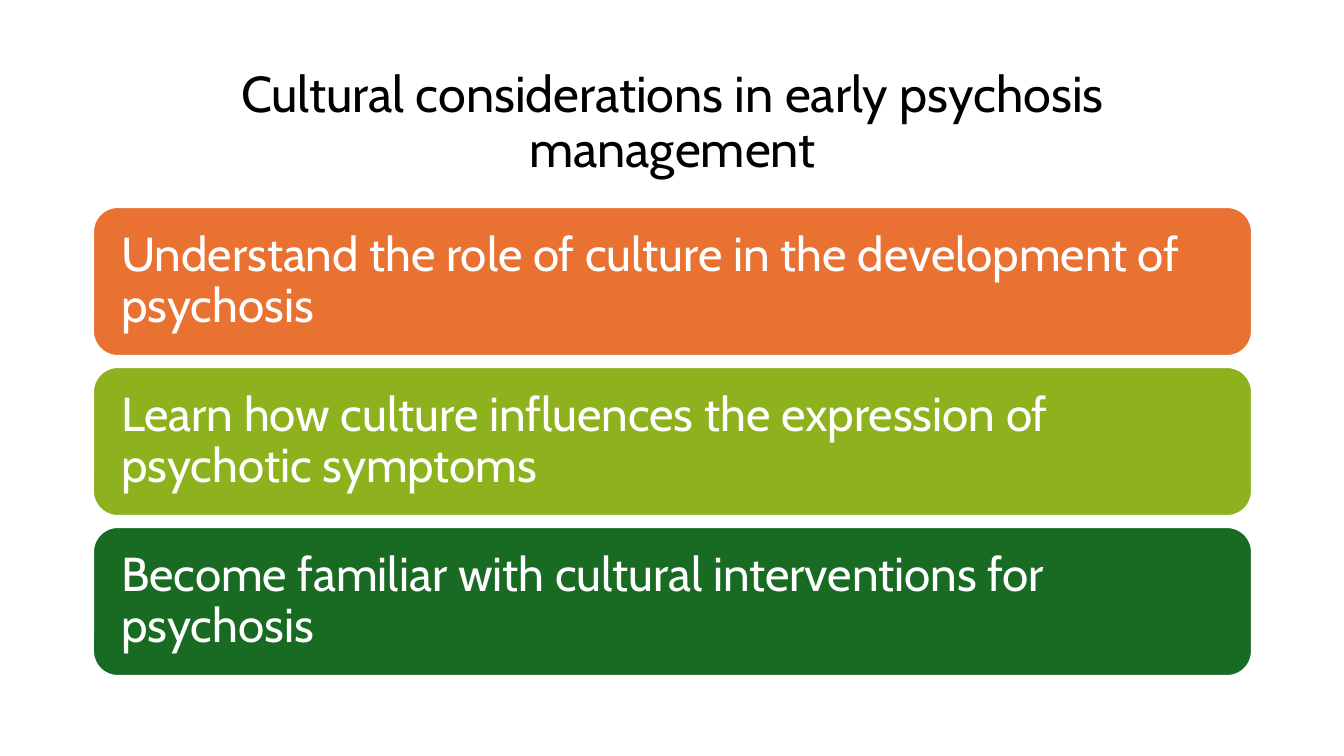
"""Build a title slide with three stacked goal bars."""
from pptx import Presentation
from pptx.dml.color import RGBColor
from pptx.enum.shapes import MSO_SHAPE
from pptx.enum.text import MSO_ANCHOR, MSO_AUTO_SIZE, PP_ALIGN
from pptx.util import Emu, Pt

ROUNDED = MSO_SHAPE.ROUNDED_RECTANGLE
MIDDLE = MSO_ANCHOR.MIDDLE
NO_FIT = MSO_AUTO_SIZE.NONE
LEFT, CENTER = PP_ALIGN.LEFT, PP_ALIGN.CENTER

THEME = {
    "font": "Cabin",
    "title_size": 36,
    "goal_size": 34,
    "black": "000000",
    "white": "FFFFFF",
    "bars": ["E97132", "8EB21E", "196B24"],
}
GOALS = [
    "Understand the role of culture in the development of psychosis",
    "Learn how culture influences the expression of psychotic symptoms",
    "Become familiar with cultural interventions for psychosis",
]
X, W = 93, 1159
TITLE_Y, TITLE_H = 61, 125
BAR_Y, BAR_H, BAR_STEP = 207, 149, 160
BAR_INSET = 21


def px(n):
    """Turn pixels into EMU."""
    return Emu(round(n * 914400 / 100.8))


def write(sp, text, align, size, color):
    """Put one formatted paragraph into a shape."""
    tf = sp.text_frame
    frame = {"word_wrap": True, "auto_size": NO_FIT, "vertical_anchor": MIDDLE}
    for name, value in frame.items():
        setattr(tf, name, value)
    p = tf.paragraphs[0]
    p.alignment = align
    p.line_spacing = 0.9
    r = p.add_run()
    r.text = text
    for name, value in {"name": THEME["font"], "size": Pt(size)}.items():
        setattr(r.font, name, value)
    r.font.color.rgb = RGBColor.from_string(color)


prs = Presentation()
prs.slide_width, prs.slide_height = px(1344), px(756)
s = prs.slides.add_slide(prs.slide_layouts[5])

title = s.shapes.title
box = {"left": X, "top": TITLE_Y, "width": W, "height": TITLE_H}
for name, value in box.items():
    setattr(title, name, px(value))
write(title, "Cultural considerations in early psychosis management",
      CENTER, THEME["title_size"], THEME["black"])

for i, (goal, color) in enumerate(zip(GOALS, THEME["bars"])):
    y = BAR_Y + i * BAR_STEP
    sp = s.shapes.add_shape(ROUNDED, px(X), px(y), px(W), px(BAR_H))
    sp.shadow.inherit = False
    sp.fill.solid()
    sp.fill.fore_color.rgb = RGBColor.from_string(color)
    sp.line.color.rgb = RGBColor.from_string(THEME["white"])
    sp.line.width = Pt(1.5)
    for side in ("left", "top", "right", "bottom"):
        setattr(sp.text_frame, f"margin_{side}", px(BAR_INSET))
    write(sp, goal, LEFT, THEME["goal_size"], THEME["white"])

prs.save("out.pptx")
